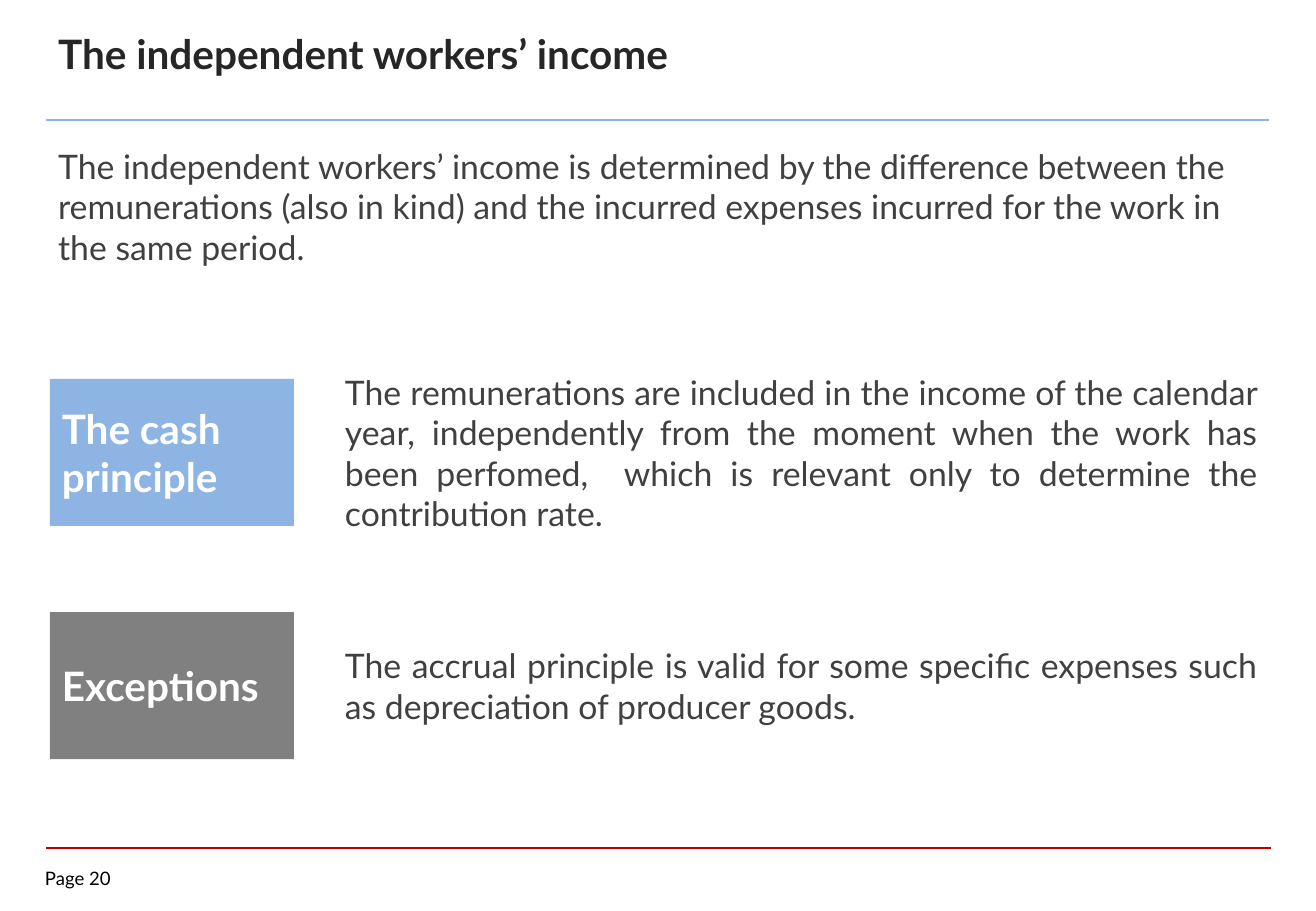
from lxml.etree import SubElement
from pptx import Presentation
from pptx.dml.color import RGBColor
from pptx.enum.shapes import MSO_CONNECTOR, MSO_SHAPE
from pptx.enum.text import MSO_ANCHOR, PP_ALIGN
from pptx.oxml.ns import qn
from pptx.util import Inches, Pt

FONT = "Lato"
BLUE, GRAY, RED = "8EB4E3", "808080", "C00000"
INK, BODY, WHITE, BLACK = "262626", "404040", "FFFFFF", "000000"

LEFT, RIGHT = 0.38, 10.44
LABEL_LEFT, LABEL_WIDTH = 0.41, 2.01
DETAIL_LEFT, DETAIL_WIDTH = 2.74, 7.71
FIRST_ROW, ROW_STEP, ROW_HEIGHT = 3.12, 1.92, 1.21

PRINCIPLES = [
    ("The cash principle", BLUE,
     "The remunerations are included in the income of the calendar year, "
     "independently from the moment when the work has been perfomed,  which is "
     "relevant only to determine the contribution rate."),
    ("Exceptions", GRAY,
     "The accrual principle is valid for some specific expenses such as "
     "depreciation of producer goods."),
]


def rgb(value):
    return RGBColor.from_string(value)


def write(shape, text, size, color, bold=False, align=PP_ALIGN.LEFT,
          anchor=MSO_ANCHOR.TOP):
    tf = shape.text_frame
    tf.text = text
    tf.word_wrap = True
    tf.vertical_anchor = anchor
    p = tf.paragraphs[0]
    p.alignment = align
    font = p.runs[0].font
    font.name, font.size, font.bold = FONT, Pt(size), bold
    font.color.rgb = rgb(color)


def add_text(s, box, text, size, color, **style):
    shape = s.shapes.add_textbox(*map(Inches, box))
    write(shape, text, size, color, **style)
    return shape


def add_rule(s, y, right, color, width):
    line = s.shapes.add_connector(MSO_CONNECTOR.STRAIGHT, Inches(LEFT), Inches(y),
                                  Inches(right), Inches(y))
    line.line.color.rgb = rgb(color)
    line.line.width = Pt(width)
    SubElement(line._element.spPr, qn("a:effectLst"))


def add_label(s, box, text, fill):
    shape = s.shapes.add_shape(MSO_SHAPE.RECTANGLE, *map(Inches, box))
    shape.shadow.inherit = False
    shape.fill.solid()
    shape.fill.fore_color.rgb = rgb(fill)
    shape.line.fill.background()
    write(shape, text, 24, WHITE, bold=True, anchor=MSO_ANCHOR.MIDDLE)


def add_principle(s, row, label, fill, detail):
    """Place a coloured label with its explanation beside it."""
    top = FIRST_ROW + row * ROW_STEP
    add_label(s, (LABEL_LEFT, top, LABEL_WIDTH, ROW_HEIGHT), label, fill)
    add_text(s, (DETAIL_LEFT, top, DETAIL_WIDTH, ROW_HEIGHT), detail, 20, BODY,
             align=PP_ALIGN.JUSTIFY, anchor=MSO_ANCHOR.MIDDLE)


def add_page_number(s, text):
    tf = add_text(s, (0.37, 7.14, 0.73, 0.22), text, 11, BLACK).text_frame
    tf.margin_left = tf.margin_right = tf.margin_top = tf.margin_bottom = 0


def main():
    prs = Presentation()
    prs.slide_width, prs.slide_height = Inches(10.83), Inches(7.5)
    s = prs.slides.add_slide(prs.slide_layouts[6])

    add_text(s, (LEFT, 0.19, 7.56, 0.71), "The independent workers’ income",
             24, INK, bold=True)
    add_rule(s, 0.99, RIGHT, BLUE, 1.5)
    add_text(s, (LEFT, 1.15, RIGHT - LEFT, 1.58),
             "The independent workers’ income is determined by the difference "
             "between the remunerations (also in kind) and the incurred expenses "
             "incurred for the work in the same period.", 20, BODY)
    for row, principle in enumerate(PRINCIPLES):
        add_principle(s, row, *principle)
    add_rule(s, 6.98, 10.46, RED, 1)
    add_page_number(s, "Page 20")

    prs.save("out.pptx")


if __name__ == "__main__":
    main()
